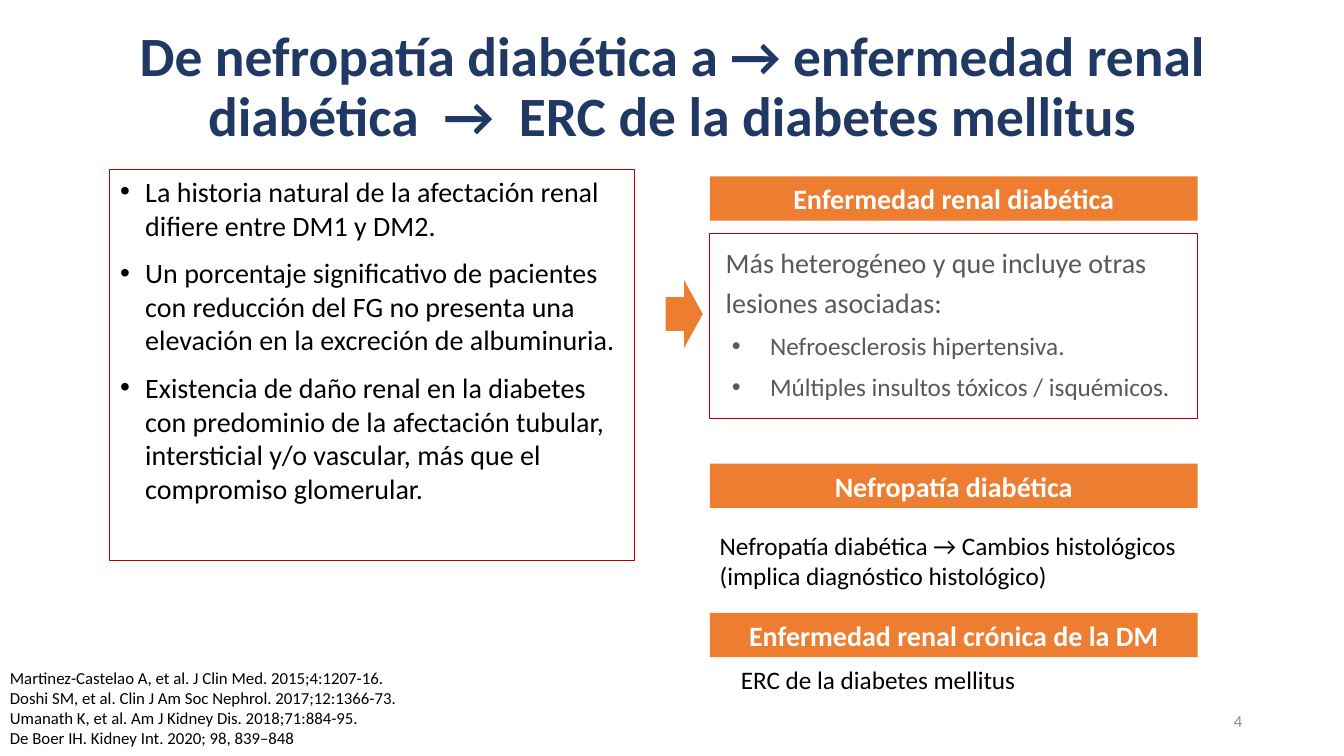
"""Build the slide on how diabetic kidney disease terms have evolved."""
import dataclasses

import pptx
import pptx.dml.color
import pptx.enum.shapes
import pptx.enum.text
import pptx.oxml
import pptx.oxml.ns
import pptx.util

ALIGN = pptx.enum.text.PP_ALIGN
ANCHOR = pptx.enum.text.MSO_ANCHOR
SHAPE = pptx.enum.shapes.MSO_SHAPE
SLIDE_WIDTH = pptx.util.Inches(13.33)
SLIDE_HEIGHT = pptx.util.Inches(7.5)
TERMS_LEFT, TERMS_WIDTH, HEADING_HEIGHT = 52.81, 36.31, 5.87


@dataclasses.dataclass(frozen=True)
class Theme:
    """Colours and type sizes of the slide."""
    font: str = "Calibri"
    navy: str = "203864"
    orange: str = "ED7D31"
    red: str = "C00000"
    black: str = "000000"
    white: str = "FFFFFF"
    grey: str = "595959"
    pale_grey: str = "8C8C8C"
    title: float = 39.6
    body: float = 20
    detail: float = 18
    small: float = 12


THEME = Theme()


def rgb(colour):
    """Turn a hex string into a colour."""
    return pptx.dml.color.RGBColor.from_string(colour)


def frame(left, top, width, height):
    """Turn percentages of the slide into left, top, width and height."""
    return (int(SLIDE_WIDTH * left / 100), int(SLIDE_HEIGHT * top / 100),
            int(SLIDE_WIDTH * width / 100), int(SLIDE_HEIGHT * height / 100))


def move(placeholder, area):
    """Move a placeholder to an area of the slide."""
    placeholder.left, placeholder.top, placeholder.width, placeholder.height = frame(*area)


def outline(box):
    """Give a box a thin red outline."""
    box.line.color.rgb = rgb(THEME.red)
    box.line.width = pptx.util.Pt(0.75)


def write(text_frame, lines, size, colour, bold=False, align=ALIGN.LEFT, anchor=ANCHOR.TOP):
    """Fill a text frame with one paragraph per line and format it."""
    text_frame.text = "\n".join(lines)
    text_frame.word_wrap = True
    text_frame.auto_size = pptx.enum.text.MSO_AUTO_SIZE.NONE
    text_frame.vertical_anchor = anchor
    for paragraph in text_frame.paragraphs:
        paragraph.alignment = align
        for run in paragraph.runs:
            run.font.name = THEME.font
            run.font.size = pptx.util.Pt(size)
            run.font.bold = bold
            run.font.color.rgb = rgb(colour)


def indent(paragraph, margin, hanging=0, bullet=False):
    """Set a paragraph's indents in inches and, if asked, its bullet."""
    properties = paragraph._p.get_or_add_pPr()
    properties.set("marL", str(pptx.util.Inches(margin)))
    properties.set("indent", str(-pptx.util.Inches(hanging)))
    if bullet:
        namespace = pptx.oxml.ns.nsdecls("a")
        properties.append(pptx.oxml.parse_xml(f'<a:buFont {namespace} typeface="Arial"/>'))
        properties.append(pptx.oxml.parse_xml(f'<a:buChar {namespace} char="•"/>'))


def add_box(slide, kind, area, fill=None):
    """Add a shape without shadow, either filled or outlined."""
    box = slide.shapes.add_shape(kind, *frame(*area))
    box.shadow.inherit = False
    if fill:
        box.fill.solid()
        box.fill.fore_color.rgb = rgb(fill)
        box.line.fill.background()
    else:
        box.fill.background()
        outline(box)
    return box


def add_heading(slide, top, term):
    """Add an orange bar that names a term."""
    bar = add_box(slide, SHAPE.RECTANGLE, (TERMS_LEFT, top, TERMS_WIDTH, HEADING_HEIGHT),
                  THEME.orange)
    write(bar.text_frame, [term], THEME.body, THEME.white, True, ALIGN.CENTER, ANCHOR.MIDDLE)


def add_text(slide, area, lines, size, colour=THEME.black, **layout):
    """Add a plain text box."""
    write(slide.shapes.add_textbox(*frame(*area)).text_frame, lines, size, colour, **layout)


def add_title(slide):
    """Fill the title placeholder."""
    title = slide.shapes.title
    move(title, (1.8, 4.93, 96.47, 13.47))
    write(title.text_frame,
          ["De nefropatía diabética a → enfermedad renal diabética  →  ERC de la diabetes mellitus"],
          THEME.title, THEME.navy, True, ALIGN.CENTER, ANCHOR.MIDDLE)
    title.text_frame.paragraphs[0].line_spacing = 0.9


def add_reasons(slide):
    """Fill the body placeholder with the reasons for the new term."""
    reasons = slide.placeholders[1]
    move(reasons, (8.18, 22.4, 39.01, 51.73))
    outline(reasons)
    write(reasons.text_frame, [
        "La historia natural de la afectación renal difiere entre DM1 y DM2.",
        "Un porcentaje significativo de pacientes con reducción del FG no presenta una "
        "elevación en la excreción de albuminuria.",
        "Existencia de daño renal en la diabetes con predominio de la afectación tubular, "
        "intersticial y/o vascular, más que el compromiso glomerular.",
    ], THEME.body, THEME.black)
    for paragraph in reasons.text_frame.paragraphs:
        paragraph.space_before = pptx.util.Pt(10)
        indent(paragraph, 0.25, 0.25, bullet=True)


def add_lesions(slide):
    """Add the box that lists the associated lesions."""
    box = add_box(slide, SHAPE.RECTANGLE, (TERMS_LEFT, 30.93, TERMS_WIDTH, 24.4))
    write(box.text_frame, [
        "Más heterogéneo y que incluye otras lesiones asociadas:",
        "Nefroesclerosis hipertensiva.",
        "Múltiples insultos tóxicos / isquémicos.",
    ], THEME.detail, THEME.grey)
    intro, *lesions = box.text_frame.paragraphs
    intro.runs[0].font.size = pptx.util.Pt(THEME.body)
    intro.line_spacing = 1.2
    indent(intro, 0.06)
    for lesion in lesions:
        lesion.line_spacing = 1.2
        lesion.space_before = pptx.util.Pt(THEME.detail * 0.2)
        indent(lesion, 0.5, 0.38, bullet=True)


def main():
    """Build and save the slide."""
    deck = pptx.Presentation()
    deck.slide_width, deck.slide_height = SLIDE_WIDTH, SLIDE_HEIGHT
    slide = deck.slides.add_slide(deck.slide_layouts[1])
    add_title(slide)
    add_reasons(slide)
    arrow = add_box(slide, SHAPE.DOWN_ARROW, (48.39, 39.07, 5.03, 4.93), THEME.orange)
    arrow.rotation = 270
    add_lesions(slide)
    for top, term in ((23.33, "Enfermedad renal diabética"),
                      (61.33, "Nefropatía diabética"),
                      (81.07, "Enfermedad renal crónica de la DM")):
        add_heading(slide, top, term)
    add_text(slide, (TERMS_LEFT, 69.47, TERMS_WIDTH, 13.47),
             ["Nefropatía diabética → Cambios histológicos (implica diagnóstico histológico)"],
             THEME.detail)
    add_text(slide, (54.39, 87.2, TERMS_WIDTH, 5.33), ["ERC de la diabetes mellitus"],
             THEME.detail)
    add_text(slide, (0, 87.6, 34.81, 12.13), [
        "Martinez-Castelao A, et al. J Clin Med. 2015;4:1207-16.",
        "Doshi SM, et al. Clin J Am Soc Nephrol. 2017;12:1366-73.",
        "Umanath K, et al. Am J Kidney Dis. 2018;71:884-95.",
        "De Boer IH. Kidney Int. 2020; 98, 839–848",
    ], THEME.small)
    add_text(slide, (70.67, 92.67, 22.51, 5.33), ["4"], THEME.small, THEME.pale_grey,
             align=ALIGN.RIGHT, anchor=ANCHOR.MIDDLE)
    deck.save("out.pptx")


if __name__ == "__main__":
    main()
